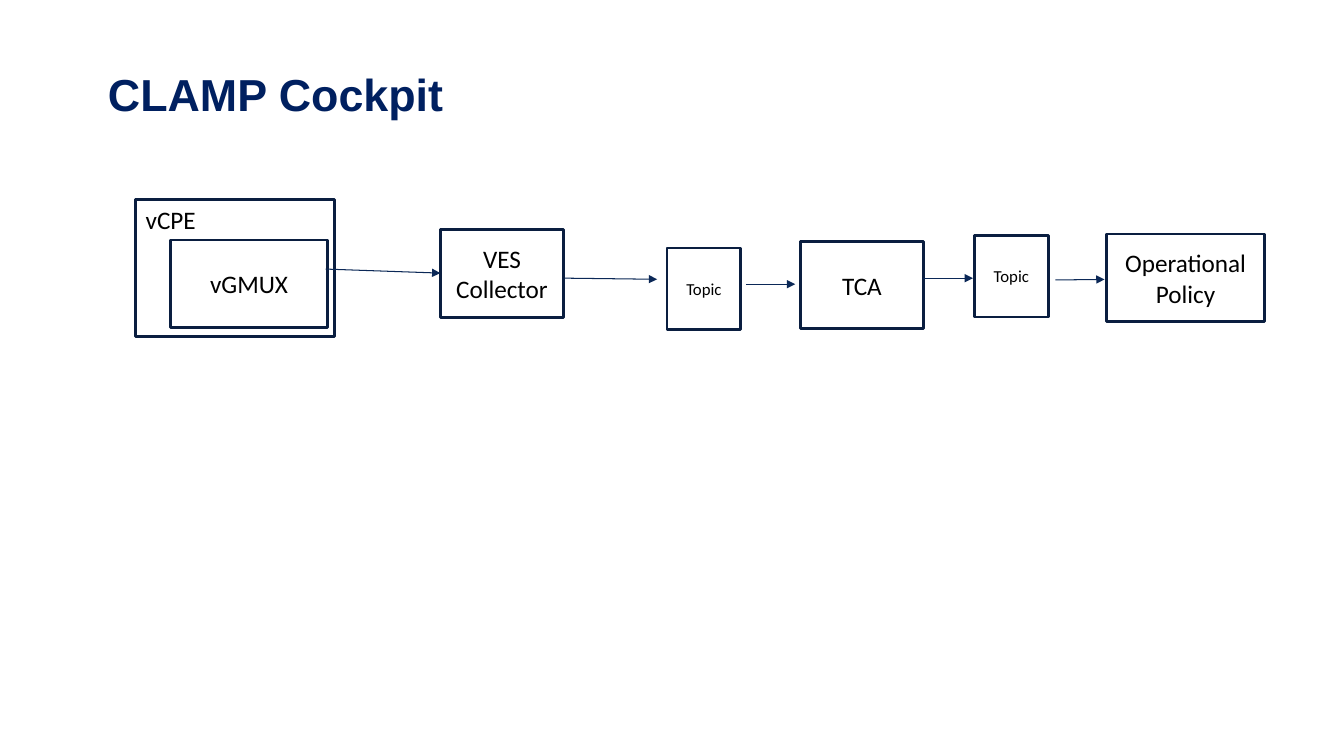
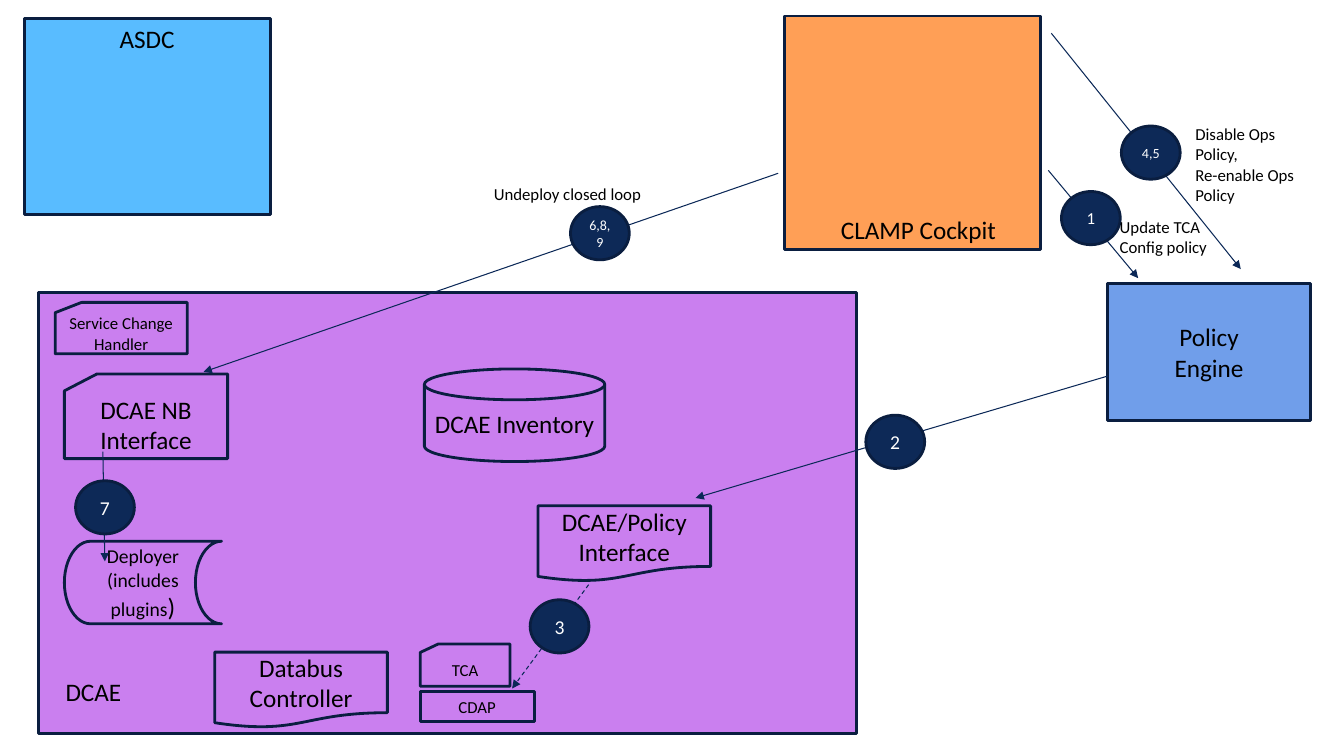
"""Build two slides: the cockpit event chain and its control loop."""
import dataclasses

import pptx
import pptx.dml.color
import pptx.enum.dml
import pptx.enum.shapes
import pptx.enum.text
import pptx.oxml.ns
import pptx.oxml.xmlchemy
import pptx.util

Pt = pptx.util.Pt
Form = pptx.enum.shapes.MSO_SHAPE
Side = pptx.enum.text.PP_ALIGN
Hold = pptx.enum.text.MSO_ANCHOR
Fit = pptx.enum.text.MSO_AUTO_SIZE


@dataclasses.dataclass(frozen=True)
class Theme:
    face: str = "Calibri"
    head_face: str = "Arial"
    head_ink: str = "002060"
    ink: str = "000000"
    white: str = "FFFFFF"
    edge: str = "0A1E40"
    wire: str = "0B2857"
    badge: str = "0D2957"
    blue: str = "59BCFF"
    orange: str = "FF9F56"
    steel: str = "709EEA"
    purple: str = "CA7FEF"
    head: int = 32
    big: int = 18
    mid: int = 14
    small: int = 12
    tiny: int = 10
    thick: float = 2
    thin: float = 0.75


LOOK = Theme()


def tint(code):
    return pptx.dml.color.RGBColor.from_string(code)


def put(item, vals):
    for name, val in vals.items():
        setattr(item, name, val)


def style(font, size, ink=LOOK.ink, face=LOOK.face, bold=False):
    put(font, {"name": face, "size": Pt(size), "bold": bold})
    font.color.rgb = tint(ink)


def write(frame, text, size, ink=LOOK.ink, side=Side.CENTER, **form):
    put(frame, form)
    for num, line in enumerate(text.split("\n")):
        para = frame.add_paragraph() if num else frame.paragraphs[0]
        para.alignment = side
        run = para.add_run()
        run.text = line
        style(run.font, size, ink)


def box(slide, text, area, fill=LOOK.white, size=LOOK.big, form=Form.RECTANGLE,
        ink=LOOK.ink, hold=Hold.MIDDLE, side=Side.CENTER, **pad):
    shape = slide.shapes.add_shape(form, *map(Pt, area))
    shape.shadow.inherit = False
    shape.fill.solid()
    shape.fill.fore_color.rgb = tint(fill)
    shape.line.color.rgb = tint(LOOK.edge)
    shape.line.width = Pt(LOOK.thick)
    write(shape.text_frame, text, size, ink, side, word_wrap=True,
          vertical_anchor=hold, **pad)
    return shape


def badge(slide, text, left, top, size=LOOK.mid):
    box(slide, text, (left, top, 42, 38), LOOK.badge, size, Form.OVAL, LOOK.white)


def label(slide, text, area):
    note = slide.shapes.add_textbox(*map(Pt, area))
    write(note.text_frame, text, LOOK.small, side=Side.LEFT,
          word_wrap=False, auto_size=Fit.SHAPE_TO_FIT_TEXT)


def arrow(slide, ends, dash=False):
    kind = pptx.enum.shapes.MSO_CONNECTOR.STRAIGHT
    wire = slide.shapes.add_connector(kind, *map(Pt, ends))
    wire.line.color.rgb = tint(LOOK.wire)
    wire.line.width = Pt(LOOK.thin)
    if dash:
        wire.line.dash_style = pptx.enum.dml.MSO_LINE.DASH
    make = pptx.oxml.xmlchemy.OxmlElement
    tip = make("a:tailEnd")
    tip.set("type", "triangle")
    props = wire.element.spPr
    props.get_or_add_ln().append(tip)
    props.append(make("a:effectLst"))


def title(slide, text):
    head = slide.shapes.title
    put(head, dict(zip(("left", "top", "width", "height"),
                       map(Pt, (73.5, 21.6, 838, 90)))))
    frame = head.text_frame
    put(frame, {"auto_size": Fit.NONE, "vertical_anchor": Hold.MIDDLE,
                "margin_left": Pt(3.6), "margin_right": Pt(3.6)})
    frame.text = text
    para = frame.paragraphs[0]
    para.alignment = Side.LEFT
    style(para.runs[0].font, LOOK.head, LOOK.head_ink, LOOK.head_face, True)


def chain(slide):
    title(slide, "CLAMP Cockpit")
    box(slide, "vCPE", (97, 142.5, 142, 98), hold=Hold.TOP, side=Side.LEFT)
    for text, left, top, width in (
            ("vGMUX", 121.7, 171.4, 112.5), ("VES Collector", 314.6, 164, 88),
            ("TCA", 571.7, 172.3, 88), ("Operational Policy", 790.6, 167.2, 112.5)):
        box(slide, text, (left, top, width, 62.6))
    for left, top in ((476.4, 177.2), (696, 168.2)):
        box(slide, "Topic", (left, top, 52.8, 58.2), size=LOOK.small)
    for ends in ((232.6, 192.2, 314.6, 195.1), (403.2, 198.7, 469.4, 199.5),
                 (532.8, 203, 568, 203), (659.5, 198.7, 695, 198.7),
                 (753.8, 200, 789, 199.6)):
        arrow(slide, ends)


def loop(slide):
    box(slide, "CLAMP Cockpit", (560.2, 11.5, 183, 166.5), LOOK.orange,
        hold=Hold.BOTTOM, margin_left=Pt(15.8))
    box(slide, "Policy\nEngine", (791.3, 202.3, 144.7, 98), LOOK.steel)
    box(slide, "ASDC", (17.3, 13, 175.7, 140.4), LOOK.blue, hold=Hold.TOP)
    box(slide, "DCAE", (27.4, 208.8, 584.6, 315.4), LOOK.purple, hold=Hold.BOTTOM,
        side=Side.LEFT, margin_left=Pt(19.4), margin_bottom=Pt(19.4))
    card, page = Form.FLOWCHART_CARD, Form.FLOWCHART_DOCUMENT
    for text, area, size, form in (
            ("DCAE Inventory", (303.1, 263.5, 128.9, 66.2), LOOK.big,
             Form.FLOWCHART_MAGNETIC_DISK),
            ("DCAE NB Interface", (46, 267.1, 116.6, 60.5), LOOK.big, card),
            ("DCAE/Policy Interface", (384.3, 361.3, 123.3, 54), LOOK.big, page),
            ("Databus Controller", (153.4, 465.8, 123.3, 54), LOOK.big, page),
            ("Service Change Handler", (39.4, 216, 94.3, 36.7), LOOK.small, card),
            ("TCA", (300.2, 460, 64.1, 30.2), LOOK.small, card),
            ("CDAP", (300.2, 493.9, 81.4, 21.6), LOOK.small, Form.RECTANGLE)):
        box(slide, text, area, LOOK.purple, size, form)
    store = box(slide, "Deployer\n(includes plugins", (46, 386.6, 112.3, 59), LOOK.purple,
                LOOK.mid, Form.FLOWCHART_STORED_DATA)
    close = store.text_frame.paragraphs[-1].add_run()
    close.text = ")"
    style(close.font, LOOK.big)
    for ends in ((748.8, 121.7, 813, 198.7), (73.5, 322.6, 74.9, 401),
                 (555.8, 123.8, 145.4, 265.7), (791.3, 268.6, 496.8, 355.7),
                 (751, 23.8, 886.3, 192.2)):
        arrow(slide, ends)
    arrow(slide, (420.5, 417.6, 365.8, 491.8), dash=True)
    badge(slide, "1", 758.2, 136.8, LOOK.small)
    badge(slide, "4,5", 801, 90, LOOK.tiny)
    badge(slide, "6,8,9", 407.5, 147.6, LOOK.tiny)
    for text, left, top in (("2", 618.5, 296.6), ("3", 378.7, 428.4), ("7", 54, 343.4)):
        badge(slide, text, left, top)
    label(slide, "Undeploy closed loop", (345.6, 127.4, 121, 21.6))
    label(slide, "Update TCA\nConfig policy", (792.7, 151.2, 77.8, 36))
    label(slide, "Disable Ops\nPolicy,\nRe-enable Ops\nPolicy", (846.7, 85, 85.7, 65.5))


def main():
    deck = pptx.Presentation()
    put(deck, {"slide_width": Pt(960), "slide_height": Pt(540)})
    for layout, draw in ((5, chain), (6, loop)):
        draw(deck.slides.add_slide(deck.slide_layouts[layout]))
    deck.save("out.pptx")


if __name__ == "__main__":
    main()
